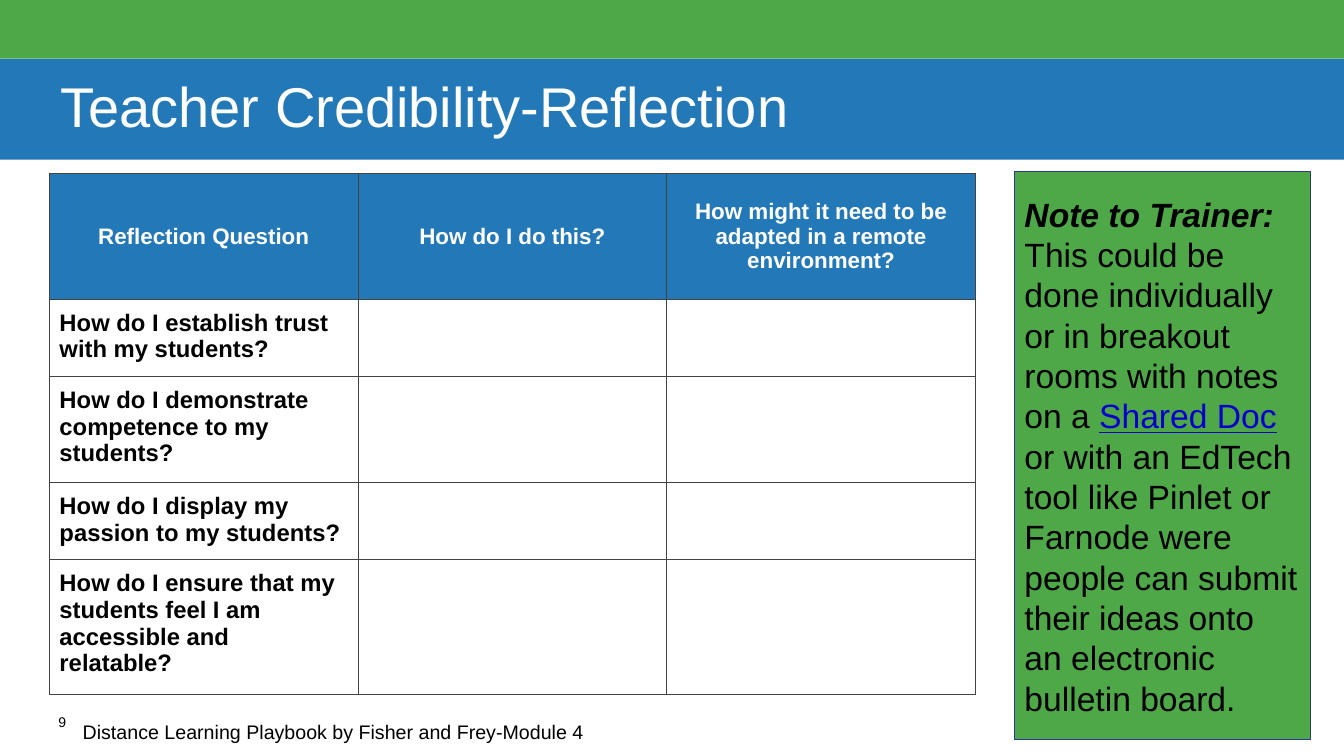
from lxml import etree
from pptx import Presentation
from pptx.dml.color import RGBColor
from pptx.enum.shapes import MSO_SHAPE
from pptx.enum.text import MSO_ANCHOR, PP_ALIGN
from pptx.oxml.ns import qn
from pptx.util import Pt

RECT = MSO_SHAPE.RECTANGLE
TOP, MIDDLE = MSO_ANCHOR.TOP, MSO_ANCHOR.MIDDLE
LEFT, CENTER = PP_ALIGN.LEFT, PP_ALIGN.CENTER

GREEN, BLUE, NAVY = "4EA848", "2379B8", "2B3890"
WHITE, BLACK, LINK, GREY = "FFFFFF", "000000", "0000CC", "434343"
PAD = 7.2

HEADS = ["Reflection Question", "How do I do this?",
         "How might it need to be adapted in a remote environment?"]
ASKS = ["How do I establish trust with my students?",
        "How do I demonstrate competence to my students?",
        "How do I display my passion to my students?",
        "How do I ensure that my students feel I am accessible and relatable?"]
ROWS = [90, 55, 72, 55, 91]
COL = 220.5


def color(code):
    return RGBColor.from_string(code)


def add_run(para, text, size, code=BLACK, bold=False, italic=False, under=False):
    run = para.add_run()
    run.text = text
    font = run.font
    font.name, font.size = "Arial", Pt(size)
    font.bold, font.italic, font.underline = bold, italic, under
    font.color.rgb = color(code)


def set_frame(frame, anchor, side=PAD, edge=PAD):
    """Wrap the text and set its anchor and insets."""
    frame.word_wrap = True
    frame.vertical_anchor = anchor
    frame.margin_left = frame.margin_right = Pt(side)
    frame.margin_top = frame.margin_bottom = Pt(edge)


def add_box(slide, box, fill, line=None):
    shape = slide.shapes.add_shape(RECT, *map(Pt, box))
    shape.shadow.inherit = False
    shape.fill.solid()
    shape.fill.fore_color.rgb = color(fill)
    if line:
        shape.line.color.rgb = color(line)
        shape.line.width = Pt(0.75)
    else:
        shape.line.fill.background()
    return shape


def add_text(slide, box, text, size, pad):
    frame = slide.shapes.add_textbox(*map(Pt, box)).text_frame
    set_frame(frame, TOP, pad, pad)
    add_run(frame.paragraphs[0], text, size)


def add_title(slide, text):
    frame = add_box(slide, (0, 42, 960, 72), BLUE).text_frame
    set_frame(frame, MIDDLE, 43.2, 0)
    para = frame.paragraphs[0]
    para.alignment, para.line_spacing = LEFT, 0.9
    add_run(para, text, 40, WHITE)


def set_border(cell):
    props = cell._tc.get_or_add_tcPr()
    for spot, side in enumerate(("a:lnL", "a:lnR", "a:lnT", "a:lnB")):
        line = etree.Element(qn(side), w=str(Pt(0.75)))
        fill = etree.SubElement(line, qn("a:solidFill"))
        etree.SubElement(fill, qn("a:srgbClr"), val=GREY)
        props.insert(spot, line)


def set_cell(cell, text, head):
    cell.margin_left = cell.margin_right = Pt(PAD)
    cell.margin_top = cell.margin_bottom = Pt(PAD)
    cell.vertical_anchor = MIDDLE if head else TOP
    if head:
        cell.fill.solid()
        cell.fill.fore_color.rgb = color(BLUE)
    else:
        cell.fill.background()
    set_border(cell)
    if text:
        para = cell.text_frame.paragraphs[0]
        para.alignment = CENTER if head else LEFT
        size, code = (16, WHITE) if head else (17, BLACK)
        add_run(para, text, size, code, bold=True)


def add_grid(slide):
    data = [HEADS] + [[ask, "", ""] for ask in ASKS]
    box = (35.3, 123.8, COL * len(HEADS), sum(ROWS))
    table = slide.shapes.add_table(len(data), len(HEADS), *map(Pt, box)).table
    table.horz_banding = False
    for col in table.columns:
        col.width = Pt(COL)
    for r, texts in enumerate(data):
        table.rows[r].height = Pt(ROWS[r])
        for c, text in enumerate(texts):
            set_cell(table.cell(r, c), text, r == 0)


def add_note(slide):
    frame = add_box(slide, (724.7, 122.8, 211.5, 405.5), GREEN, NAVY).text_frame
    set_frame(frame, MIDDLE)
    head, body = frame.paragraphs[0], frame.add_paragraph()
    head.alignment = body.alignment = LEFT
    add_run(head, "Note to Trainer:", 24, bold=True, italic=True)
    add_run(body, "This could be done individually or in breakout rooms "
                  "with notes on a ", 24)
    add_run(body, "Shared Doc", 24, LINK, under=True)
    add_run(body, " or with an EdTech tool like Pinlet or Farnode were people "
                  "can submit their ideas onto an electronic bulletin board.", 24)


def main():
    deck = Presentation()
    deck.slide_width, deck.slide_height = Pt(960), Pt(540)
    slide = deck.slides.add_slide(deck.slide_layouts[6])
    add_box(slide, (0, 0, 960, 42), GREEN)
    add_title(slide, "Teacher Credibility-Reflection")
    add_text(slide, (41.8, 509.8, 30, 18), "9", 10, 0)
    add_grid(slide)
    add_text(slide, (52, 507, 540, 31.5),
             "Distance Learning Playbook by Fisher and Frey-Module 4", 14, PAD)
    add_note(slide)
    deck.save("out.pptx")


if __name__ == "__main__":
    main()
